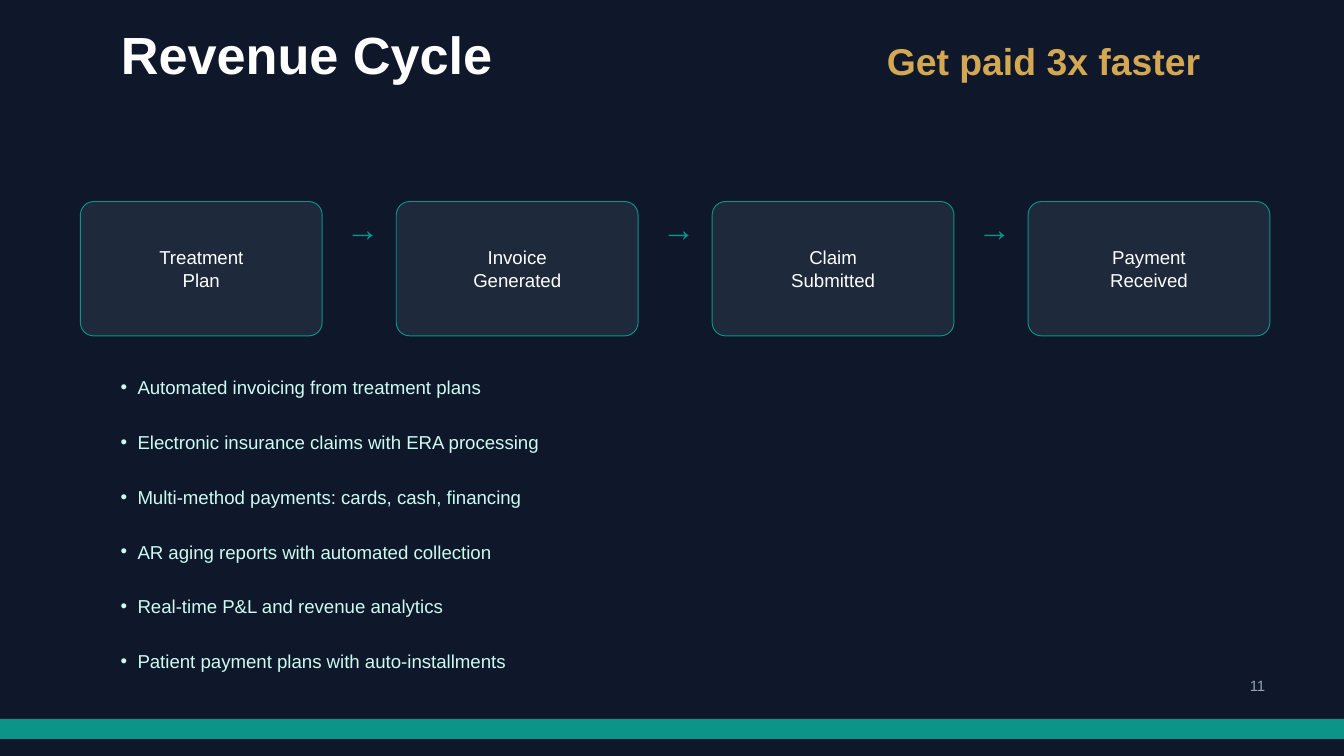
from lxml.etree import SubElement
from pptx import Presentation
from pptx.dml.color import RGBColor
from pptx.enum.shapes import MSO_SHAPE
from pptx.enum.text import MSO_ANCHOR, MSO_AUTO_SIZE, PP_ALIGN
from pptx.oxml.ns import qn
from pptx.util import Cm, Pt

# Content
TITLE = "Revenue Cycle"
TAGLINE = "Get paid 3x faster"
STEPS = ["Treatment\nPlan", "Invoice\nGenerated", "Claim\nSubmitted", "Payment\nReceived"]
BENEFITS = [
    "Automated invoicing from treatment plans",
    "Electronic insurance claims with ERA processing",
    "Multi-method payments: cards, cash, financing",
    "AR aging reports with automated collection",
    "Real-time P&L and revenue analytics",
    "Patient payment plans with auto-installments",
]
PAGE_NUMBER = "11"

# Style
FONT = "Arial"
NAVY, SLATE, TEAL, MINT = "0F172A", "1E293B", "0D9488", "CCFBF1"
WHITE, GOLD, GREY = "FFFFFF", "D4A853", "94A3B8"

# Layout, in centimetres
PAGE_WIDTH, PAGE_HEIGHT = 25.4, 14.29
STEP_LEFT, STEP_TOP, STEP_WIDTH, STEP_HEIGHT = 1.52, 3.81, 4.57, 2.54
STEP_PITCH = 5.97
ARROW_OFFSET, ARROW_WIDTH, ARROW_MIDDLE = 4.7, 1.27, 4.32
BULLET_INDENT = 0.32


def color(value):
    return RGBColor.from_string(value)


def write(shape, text, size, text_color, bold=False, align=PP_ALIGN.LEFT):
    frame = shape.text_frame
    frame.text = text
    frame.word_wrap = True
    frame.auto_size = MSO_AUTO_SIZE.NONE
    frame.vertical_anchor = MSO_ANCHOR.MIDDLE
    for para in frame.paragraphs:
        para.alignment = align
        for span in para.runs:
            span.font.name = FONT
            span.font.size = Pt(size)
            span.font.bold = bold
            span.font.color.rgb = color(text_color)


def place(shape, left, middle, width, height):
    shape.left, shape.top = Cm(left), Cm(middle - height / 2)
    shape.width, shape.height = Cm(width), Cm(height)


def add_text(page, left, middle, width, height, *style, **options):
    box = page.shapes.add_textbox(0, 0, 0, 0)
    place(box, left, middle, width, height)
    write(box, *style, **options)
    return box


def add_panel(page, kind, left, top, width, height, fill):
    panel = page.shapes.add_shape(kind, Cm(left), Cm(top), Cm(width), Cm(height))
    panel.shadow.inherit = False
    panel.fill.solid()
    panel.fill.fore_color.rgb = color(fill)
    panel.line.fill.background()
    return panel


def add_bullet(para):
    properties = para._p.get_or_add_pPr()
    properties.set("marL", str(Cm(BULLET_INDENT)))
    properties.set("indent", str(-Cm(BULLET_INDENT)))
    SubElement(properties, qn("a:buFont"), typeface=FONT)
    SubElement(properties, qn("a:buChar"), char="•")


def main():
    deck = Presentation()
    deck.slide_width, deck.slide_height = Cm(PAGE_WIDTH), Cm(PAGE_HEIGHT)
    page = deck.slides.add_slide(deck.slide_layouts[5])
    page.background.fill.solid()
    page.background.fill.fore_color.rgb = color(NAVY)

    # Heading
    place(page.shapes.title, 2.03, 1.02, 15.24, 1.4)
    write(page.shapes.title, TITLE, 28, WHITE, bold=True)
    add_text(page, 16.51, 1.14, 7.62, 1.2, TAGLINE, 20, GOLD, bold=True)

    # Process steps with arrows between them
    for index, step in enumerate(STEPS):
        left = STEP_LEFT + index * STEP_PITCH
        panel = add_panel(page, MSO_SHAPE.ROUNDED_RECTANGLE, left, STEP_TOP,
                          STEP_WIDTH, STEP_HEIGHT, SLATE)
        panel.adjustments[0] = 0.1
        panel.line.color.rgb = color(TEAL)
        panel.line.width = Pt(0.5)
        write(panel, step, 10, WHITE, align=PP_ALIGN.CENTER)
        if index < len(STEPS) - 1:
            add_text(page, left + ARROW_OFFSET, ARROW_MIDDLE, ARROW_WIDTH, 1,
                     "→", 18, TEAL, align=PP_ALIGN.CENTER)

    # Benefits
    benefits = add_text(page, 2.03, 9.91, 21.59, 6, "\n".join(BENEFITS), 10, MINT)
    for index, para in enumerate(benefits.text_frame.paragraphs):
        if index:
            para.space_before = Pt(17.3)
        add_bullet(para)

    # Footer
    add_panel(page, MSO_SHAPE.RECTANGLE, 0, 13.59, PAGE_WIDTH, 0.38, TEAL)
    add_text(page, 23.37, 12.95, 1.27, 0.6, PAGE_NUMBER, 8, GREY)

    deck.save("out.pptx")


if __name__ == "__main__":
    main()
